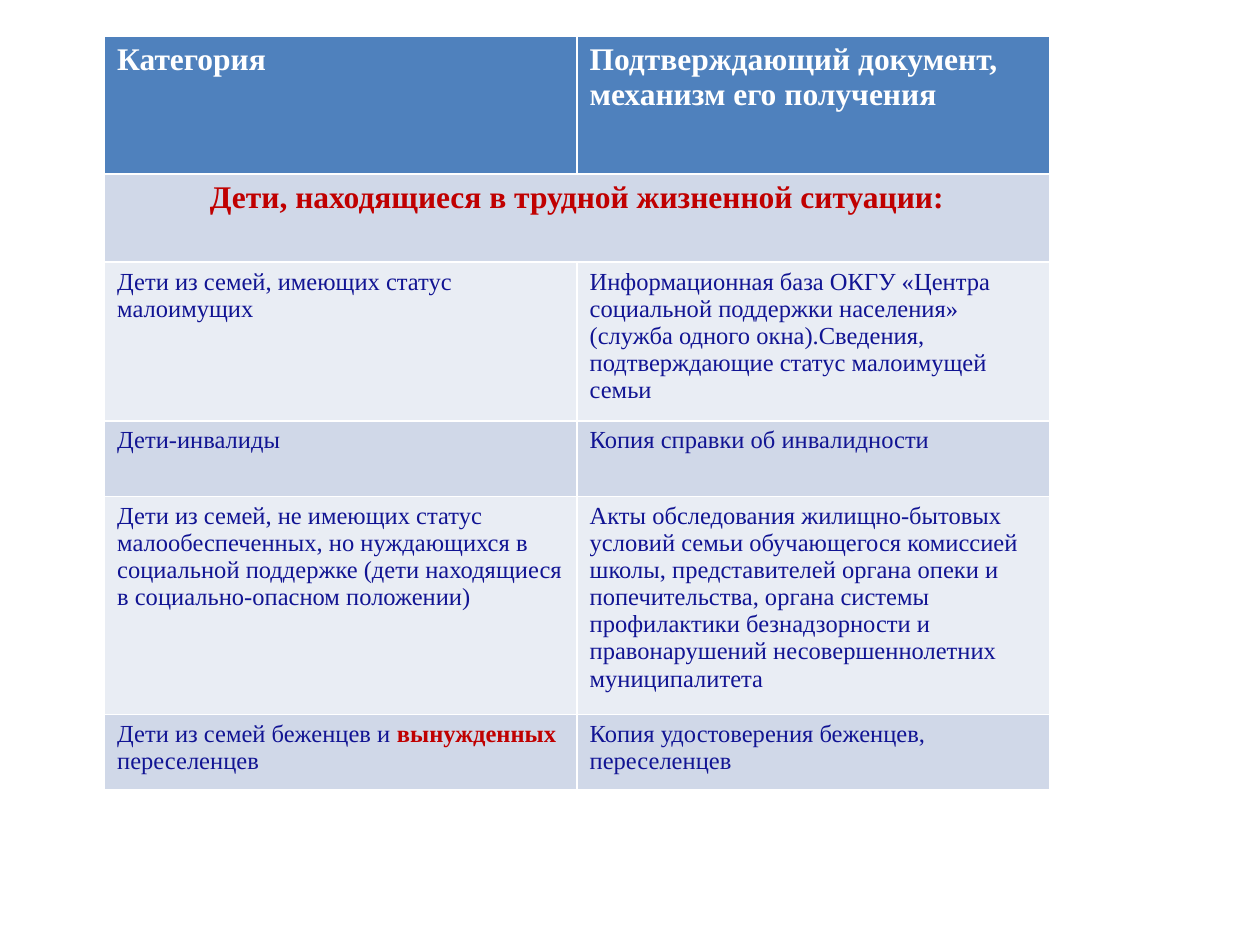
from pptx import Presentation
from pptx.dml.color import RGBColor
from pptx.enum.text import PP_ALIGN
from pptx.util import Inches, Pt

WHITE = RGBColor(0xFF, 0xFF, 0xFF)
HEADER_BLUE = RGBColor(0x4F, 0x81, 0xBD)
BAND_DARK = RGBColor(0xD0, 0xD8, 0xE8)
BAND_LIGHT = RGBColor(0xE9, 0xED, 0xF4)
NAVY = RGBColor(0x11, 0x14, 0x93)
RED = RGBColor(0xC0, 0x00, 0x00)

HEADINGS = ["Категория", "Подтверждающий документ, механизм его получения"]
SECTION = "Дети, находящиеся в трудной жизненной ситуации:"
HIGHLIGHT = "вынужденных"
CATEGORIES = [
    (["Дети из семей, имеющих статус малоимущих"],
     "Информационная база ОКГУ «Центра социальной поддержки населения» "
     "(служба одного окна).Сведения, подтверждающие статус малоимущей семьи"),
    (["Дети-инвалиды"], "Копия справки об инвалидности"),
    (["Дети из семей, не имеющих статус малообеспеченных, но нуждающихся в "
      "социальной поддержке (дети находящиеся в социально-опасном положении)"],
     "Акты обследования жилищно-бытовых условий семьи обучающегося комиссией "
     "школы, представителей органа опеки и попечительства, органа системы "
     "профилактики безнадзорности и правонарушений несовершеннолетних "
     "муниципалитета"),
    (["Дети из семей беженцев и ", HIGHLIGHT, " переселенцев"],
     "Копия удостоверения беженцев, переселенцев"),
]
ROW_HEIGHTS = [1.09, 0.7, 1.26, 0.6, 1.73, 0.6]


def add_run(cell, text, size, color, bold):
    run = cell.text_frame.paragraphs[0].add_run()
    run.text = text
    run.font.name = "Times New Roman"
    run.font.size = Pt(size)
    run.font.bold = bold
    run.font.color.rgb = color


presentation = Presentation()
presentation.slide_width = Inches(10)
presentation.slide_height = Inches(7.5)
slide = presentation.slides.add_slide(presentation.slide_layouts[6])

# Table grid: the default style supplies the white rules
table = slide.shapes.add_table(
    len(ROW_HEIGHTS), 2, Inches(0.83), Inches(0.29),
    Inches(7.5), Inches(sum(ROW_HEIGHTS))).table
for row, height in zip(table.rows, ROW_HEIGHTS):
    row.height = Inches(height)

# Header and alternating band fills
for index, row in enumerate(table.rows):
    for cell in row.cells:
        cell.fill.solid()
        if index == 0:
            cell.fill.fore_color.rgb = HEADER_BLUE
        else:
            cell.fill.fore_color.rgb = BAND_DARK if index % 2 else BAND_LIGHT

# Header row
for column, heading in enumerate(HEADINGS):
    add_run(table.cell(0, column), heading, 18, WHITE, True)

# Section row across both columns
section_cell = table.cell(1, 0)
section_cell.merge(table.cell(1, 1))
add_run(section_cell, SECTION, 18, RED, True)
section_cell.text_frame.paragraphs[0].alignment = PP_ALIGN.CENTER

# Categories and their documents
for index, (category, document) in enumerate(CATEGORIES, start=2):
    for text in category:
        highlighted = text == HIGHLIGHT
        add_run(table.cell(index, 0), text, 14,
                RED if highlighted else NAVY, highlighted)
    add_run(table.cell(index, 1), document, 14, NAVY, False)

presentation.save("out.pptx")
